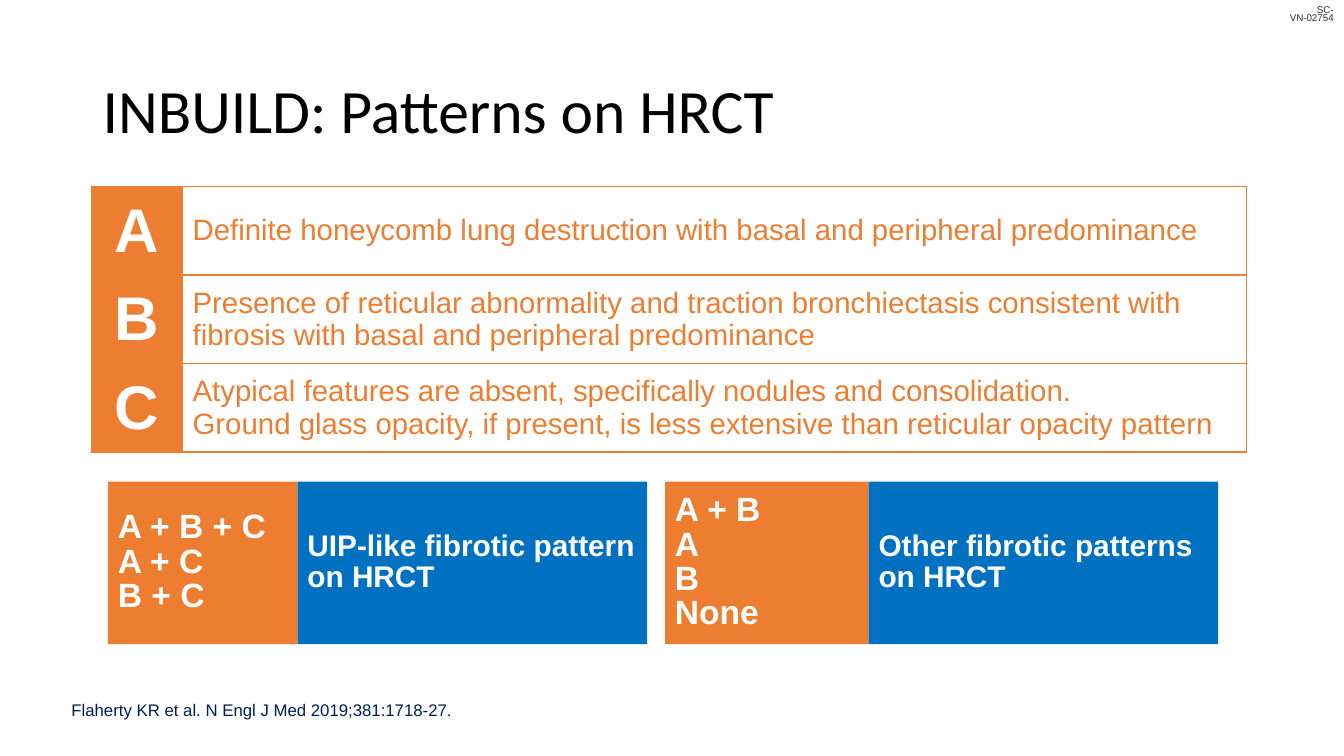
"""Build the slide on HRCT patterns: three criteria and the groups they form."""
from dataclasses import dataclass

from lxml.etree import SubElement
from pptx import Presentation
from pptx.dml.color import RGBColor
from pptx.enum.shapes import MSO_SHAPE as Preset
from pptx.enum.text import MSO_ANCHOR as Anchor, PP_ALIGN as Align
from pptx.oxml.ns import qn
from pptx.slide import Slide
from pptx.table import _Cell as Cell
from pptx.text.text import TextFrame
from pptx.util import Cm, Pt

COLORS = {"orange": "ED7D31", "blue": "0070C0", "white": "FFFFFF",
          "black": "000000", "navy": "001E55", "grey": "303030"}


@dataclass(frozen=True)
class Style:
    """Look of a piece of text."""
    size: float
    color: str
    bold: bool = False
    font: str = "Arial"
    spacing: float = 1.0
    align: Align = Align.LEFT
    anchor: Anchor = Anchor.MIDDLE


@dataclass(frozen=True)
class Label:
    """Free text and its place in centimetres."""
    text: str
    box: tuple[float, float, float, float]
    style: Style


@dataclass(frozen=True)
class Criterion:
    """One row of the criteria table."""
    letter: str
    description: str


@dataclass(frozen=True)
class PatternGroup:
    """Combinations of criteria beside the pattern they define."""
    left: float
    combinations_width: float
    combinations: str
    pattern: str


LETTER = Style(44, "white", bold=True, align=Align.CENTER)
DESCRIPTION = Style(21, "orange")
COMBINATION = Style(24, "white", bold=True, spacing=0.85)
PATTERN = Style(21.3, "white", bold=True, spacing=0.85)

LABELS = [
    Label("SC-VN-02754", (31.98, 0.05, 1.88, 0.41),
          Style(7, "grey", spacing=0.7, align=Align.RIGHT, anchor=Anchor.TOP)),
    Label("INBUILD: Patterns on HRCT", (2.34, 1.02, 29.21, 3.68),
          Style(44, "black", font="Calibri", spacing=0.9)),
    Label("Flaherty KR et al. N Engl J Med 2019;381:1718-27.",
          (1.55, 16.76, 30.84, 1.5), Style(12, "navy", anchor=Anchor.BOTTOM)),
]
CRITERIA = [
    Criterion("A", "Definite honeycomb lung destruction with basal and "
                   "peripheral predominance"),
    Criterion("B", "Presence of reticular abnormality and traction bronchiectasis "
                   "consistent with fibrosis with basal and peripheral predominance"),
    Criterion("C", "Atypical features are absent, specifically nodules and "
                   "consolidation.\nGround glass opacity, if present, is less "
                   "extensive than reticular opacity pattern"),
]
GROUPS = [
    PatternGroup(2.72, 4.78, "A + B + C\nA + C\nB + C",
                 "UIP-like fibrotic pattern on HRCT"),
    PatternGroup(16.76, 5.13, "A + B\nA\nB\nNone",
                 "Other fibrotic patterns on HRCT"),
]
COLUMN_WIDTHS = (2.29, 26.82)
ROW_HEIGHT = 2.23
GROUP_TOP, GROUP_HEIGHT, PATTERN_WIDTH = 12.14, 4.09, 8.81


def color(name: str) -> RGBColor:
    """Look up a colour of the slide."""
    return RGBColor.from_string(COLORS[name])


def write(frame: TextFrame, text: str, style: Style) -> None:
    """Fill a text frame, one paragraph for each line of text."""
    frame.text = text
    font_format = {"size": Pt(style.size), "bold": style.bold, "name": style.font}
    paragraph_format = {"alignment": style.align, "line_spacing": style.spacing}
    for paragraph in frame.paragraphs:
        for attribute, value in paragraph_format.items():
            setattr(paragraph, attribute, value)
        for run in paragraph.runs:
            for attribute, value in font_format.items():
                setattr(run.font, attribute, value)
            run.font.color.rgb = color(style.color)


def add_label(slide: Slide, label: Label) -> None:
    """Place free text."""
    frame = slide.shapes.add_textbox(*map(Cm, label.box)).text_frame
    frame.word_wrap = True
    frame.vertical_anchor = label.style.anchor
    write(frame, label.text, label.style)


def add_panel(slide: Slide, left: float, width: float, fill: str,
              text: str, style: Style) -> None:
    """Draw one filled panel of a pattern group."""
    panel = slide.shapes.add_shape(
        Preset.RECTANGLE, Cm(left), Cm(GROUP_TOP), Cm(width), Cm(GROUP_HEIGHT))
    panel.shadow.inherit = False
    panel.fill.solid()
    panel.fill.fore_color.rgb = color(fill)
    panel.line.fill.background()
    inset = Cm(0.25)
    frame_format = {"word_wrap": True, "vertical_anchor": style.anchor,
                    "margin_left": inset, "margin_right": inset,
                    "margin_top": inset, "margin_bottom": inset}
    for attribute, value in frame_format.items():
        setattr(panel.text_frame, attribute, value)
    write(panel.text_frame, text, style)


def add_group(slide: Slide, group: PatternGroup) -> None:
    """Draw the combinations and, joined to their right, the pattern."""
    add_panel(slide, group.left, group.combinations_width, "orange",
              group.combinations, COMBINATION)
    add_panel(slide, group.left + group.combinations_width, PATTERN_WIDTH, "blue",
              group.pattern, PATTERN)


def add_borders(cell: Cell) -> None:
    """Outline a cell in orange."""
    properties = cell._tc.get_or_add_tcPr()
    for side in ("lnL", "lnR", "lnT", "lnB"):
        border = SubElement(properties, qn(f"a:{side}"), w=str(Pt(1)))
        fill = SubElement(border, qn("a:solidFill"))
        SubElement(fill, qn("a:srgbClr"), val=COLORS["orange"])


def add_criteria(slide: Slide) -> None:
    """Draw the criteria table."""
    table = slide.shapes.add_table(
        len(CRITERIA), len(COLUMN_WIDTHS), Cm(2.31), Cm(4.7),
        Cm(sum(COLUMN_WIDTHS)), Cm(ROW_HEIGHT * len(CRITERIA))).table
    for attribute, value in {"first_row": False, "horz_banding": False}.items():
        setattr(table, attribute, value)
    for column, width in zip(table.columns, COLUMN_WIDTHS):
        column.width = Cm(width)
    for row, criterion in zip(table.rows, CRITERIA):
        row.height = Cm(ROW_HEIGHT)
        contents = ((criterion.letter, LETTER, "orange"),
                    (criterion.description, DESCRIPTION, "white"))
        for cell, (text, style, fill) in zip(row.cells, contents):
            add_borders(cell)
            cell.fill.solid()
            cell.fill.fore_color.rgb = color(fill)
            cell.vertical_anchor = style.anchor
            write(cell.text_frame, text, style)


def main() -> None:
    """Build and save the slide."""
    deck = Presentation()
    deck.slide_width, deck.slide_height = Cm(33.87), Cm(19.05)
    slide = deck.slides.add_slide(deck.slide_layouts[6])
    add_criteria(slide)
    for group in GROUPS:
        add_group(slide, group)
    for label in LABELS:
        add_label(slide, label)
    deck.save("out.pptx")


if __name__ == "__main__":
    main()
